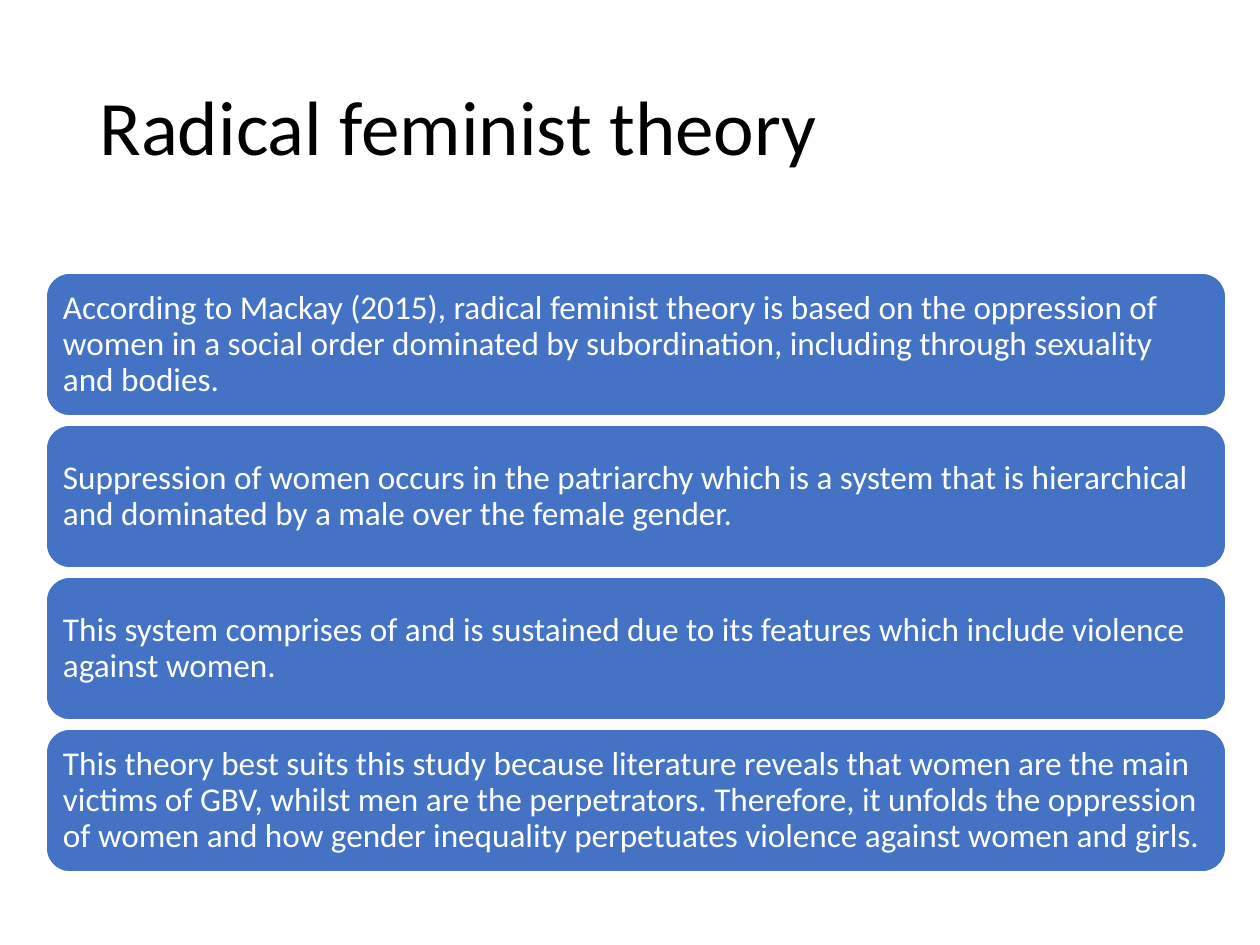
from pptx import Presentation
from pptx import util as u
from pptx.dml.color import RGBColor
from pptx.enum import shapes, text

PX = 914400 / 126
BLACK = RGBColor(0x00, 0x00, 0x00)
WHITE = RGBColor(0xFF, 0xFF, 0xFF)
BLUE = RGBColor(0x44, 0x72, 0xC4)
TITLE = "Radical feminist theory"
POINTS = [
    "According to Mackay (2015), radical feminist theory is based on the oppression of "
    "women in a social order dominated by subordination, including through sexuality and bodies.",
    "Suppression of women occurs in the patriarchy which is a system that is hierarchical "
    "and dominated by a male over the female gender.",
    "This system comprises of and is sustained due to its features which include violence "
    "against women.",
    "This theory best suits this study because literature reveals that women are the main "
    "victims of GBV, whilst men are the perpetrators. Therefore, it unfolds the oppression "
    "of women and how gender inequality perpetuates violence against women and girls.",
]


def px(num):
    return u.Emu(round(num * PX))


def write(shape, words, size, color):
    frame = shape.text_frame
    frame.word_wrap = True
    frame.vertical_anchor = text.MSO_ANCHOR.MIDDLE
    para = frame.paragraphs[0]
    para.alignment = text.PP_ALIGN.LEFT
    para.line_spacing = 0.9
    run = para.add_run()
    run.text = words
    run.font.name = "Calibri"
    run.font.size = u.Pt(size)
    run.font.color.rgb = color
    return frame


deck = Presentation()
deck.slide_width = px(1260)
deck.slide_height = px(945)
slide = deck.slides.add_slide(deck.slide_layouts[6])

title = slide.shapes.add_textbox(px(87), px(50), px(1086), px(161))
write(title, TITLE, 44, BLACK)

for row, words in enumerate(POINTS):
    card = slide.shapes.add_shape(
        shapes.MSO_SHAPE.ROUNDED_RECTANGLE, px(46), px(273 + 152 * row), px(1180), px(143))
    card.shadow.inherit = False
    card.fill.solid()
    card.fill.fore_color.rgb = BLUE
    card.line.color.rgb = WHITE
    card.line.width = u.Pt(1)
    frame = write(card, words, 19, WHITE)
    frame.margin_left = frame.margin_right = px(10)
    frame.margin_top = frame.margin_bottom = px(10)
    frame.paragraphs[0].space_after = u.Pt(7)

deck.save("out.pptx")
